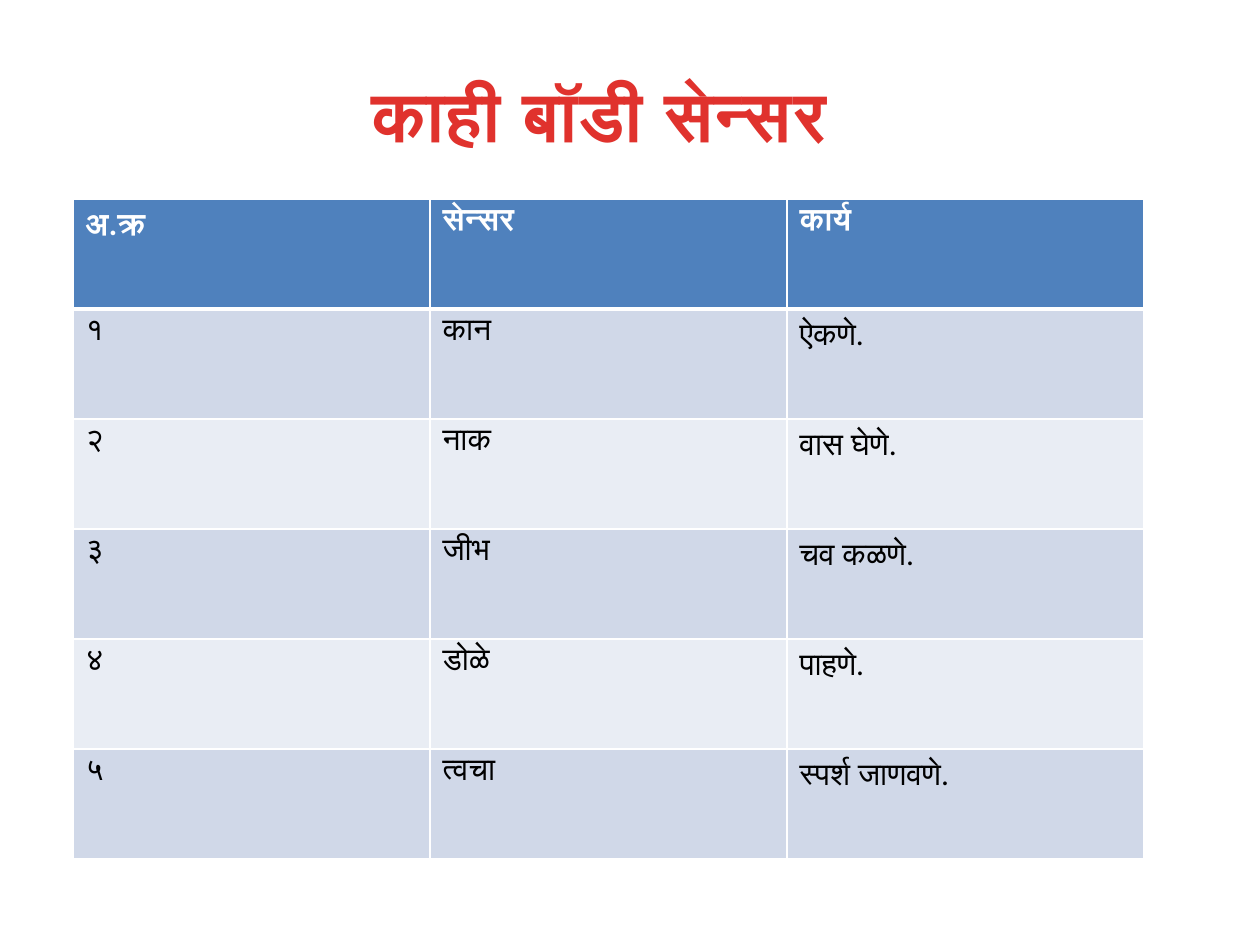
from lxml import etree
from pptx import Presentation
from pptx import util as u
from pptx.dml.color import RGBColor
from pptx.enum import text as t
from pptx.oxml.ns import qn

PX = 914400 // 126
WHITE, BLACK, RED, BLUE = "FFFFFF", "000000", "E0322D", "4F81BD"
BANDS = ["D0D8E8", "E9EDF4"]
SENSORS = [
    ("अ.क्र", "सेन्सर", "कार्य"),
    ("१", "कान", "ऐकणे."),
    ("२", "नाक", "वास घेणे."),
    ("३", "जीभ", "चव कळणे."),
    ("४", "डोळे", "पाहणे."),
    ("५", "त्वचा", "स्पर्श जाणवणे."),
]
COLUMN_WIDTH, ROW_HEIGHT = 357, 110


def px(length):
    return u.Emu(length * PX)


def color(value):
    return RGBColor.from_string(value)


def write(frame, words, size=18, font="Calibri", fill=BLACK, bold=False,
          align=t.PP_ALIGN.LEFT, spacing=None):
    paragraph = frame.paragraphs[0]
    paragraph.alignment = align
    run = paragraph.add_run()
    run.text = words
    run.font.size = u.Pt(size)
    run.font.name = font
    run.font.bold = bold
    run.font.color.rgb = color(fill)
    if spacing:
        run.font._element.set("spc", str(int(spacing * 100)))


def add_title(slide, words):
    title = slide.shapes.add_textbox(px(63), px(38), px(1134), px(151))
    frame = title.text_frame
    frame.word_wrap = True
    frame.vertical_anchor = t.MSO_ANCHOR.MIDDLE
    # The heading sits a little left of the middle
    frame.margin_right = px(75)
    write(frame, words, size=40, font="Arial", fill=RED, bold=True,
          align=t.PP_ALIGN.CENTER, spacing=0.5)


def add_borders(cell, **widths):
    properties = cell._tc.get_or_add_tcPr()
    for side in "LRTB":
        line = etree.SubElement(properties, qn(f"a:ln{side}"),
                                w=str(u.Pt(widths.get(side, 1))))
        fill = etree.SubElement(line, qn("a:solidFill"))
        etree.SubElement(fill, qn("a:srgbClr"), val=WHITE)


def add_sensor_table(slide, rows):
    columns = len(rows[0])
    frame = slide.shapes.add_table(
        len(rows), columns, px(73), px(199),
        px(COLUMN_WIDTH * columns), px(ROW_HEIGHT * len(rows)))
    table = frame.table
    for column in table.columns:
        column.width = px(COLUMN_WIDTH)
    for r, words in enumerate(rows):
        table.rows[r].height = px(ROW_HEIGHT)
        header = r == 0
        for c, word in enumerate(words):
            cell = table.cell(r, c)
            # A thick rule parts the header from the body
            add_borders(cell, T=3 if r == 1 else 1, B=3 if header else 1)
            cell.fill.solid()
            cell.fill.fore_color.rgb = color(BLUE if header else BANDS[(r - 1) % 2])
            write(cell.text_frame, word, fill=WHITE if header else BLACK, bold=header)


def main():
    deck = Presentation()
    deck.slide_width, deck.slide_height = px(1260), px(945)
    slide = deck.slides.add_slide(deck.slide_layouts[6])
    add_title(slide, "काही बॉडी सेन्सर")
    add_sensor_table(slide, SENSORS)
    deck.save("out.pptx")


if __name__ == "__main__":
    main()
